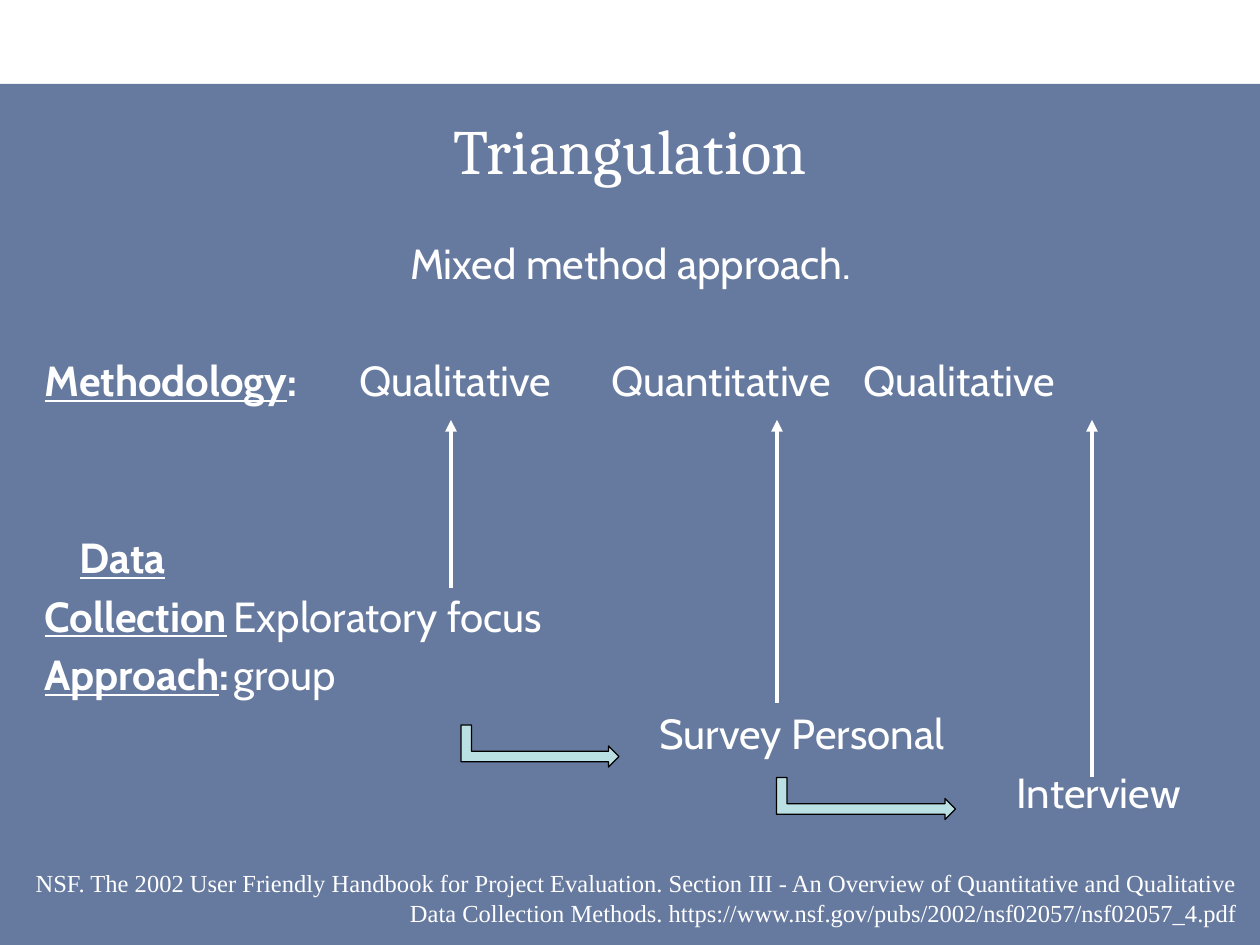
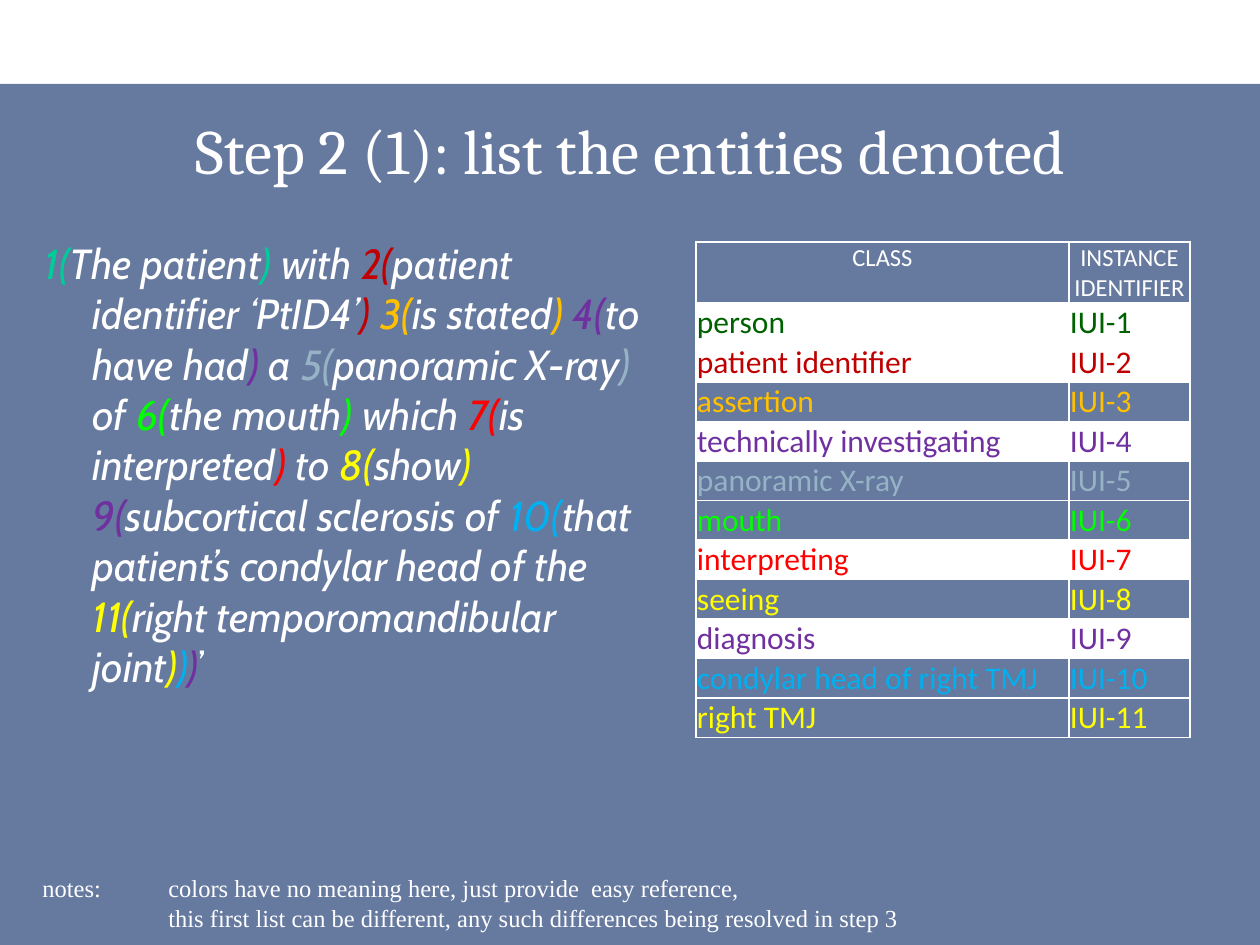
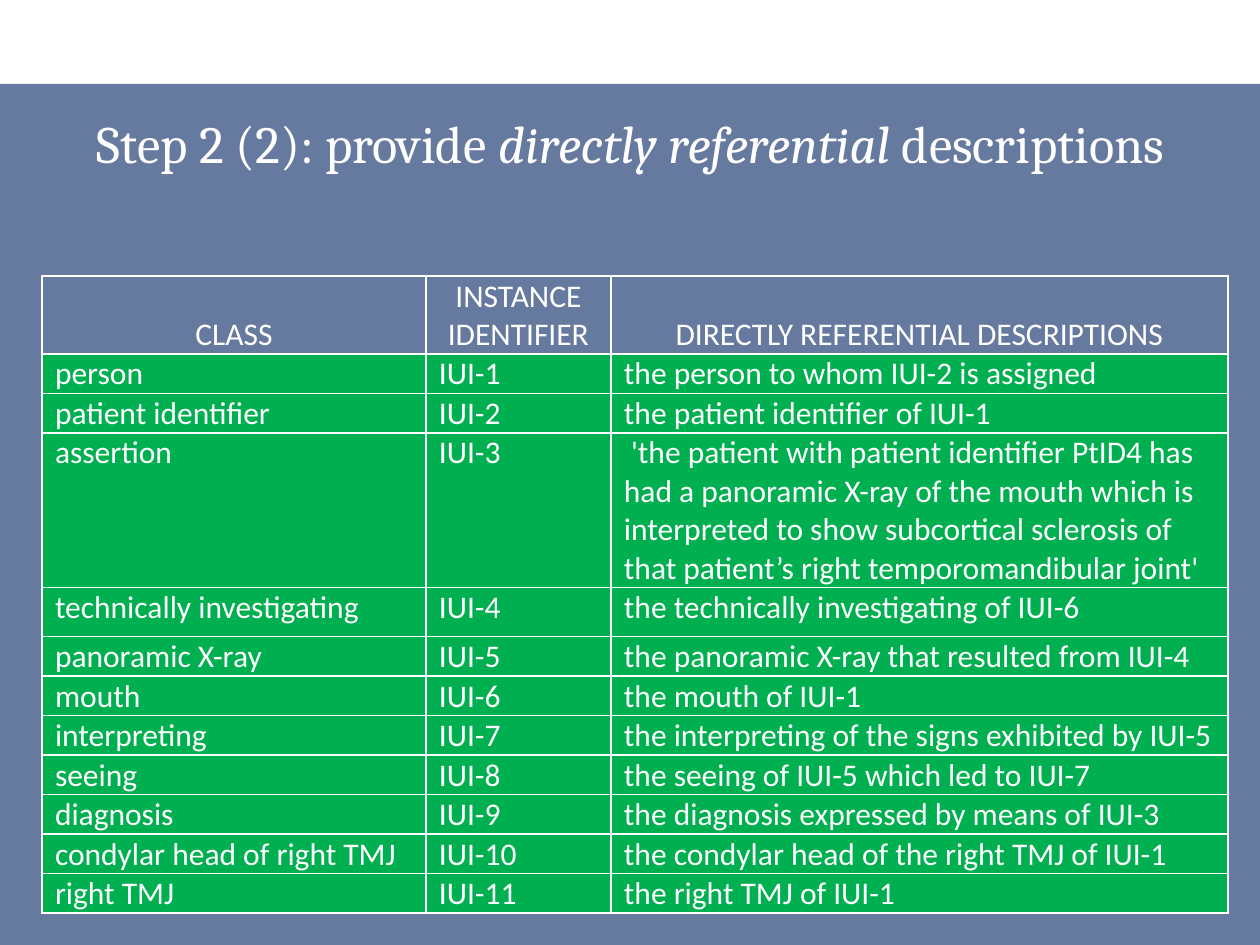
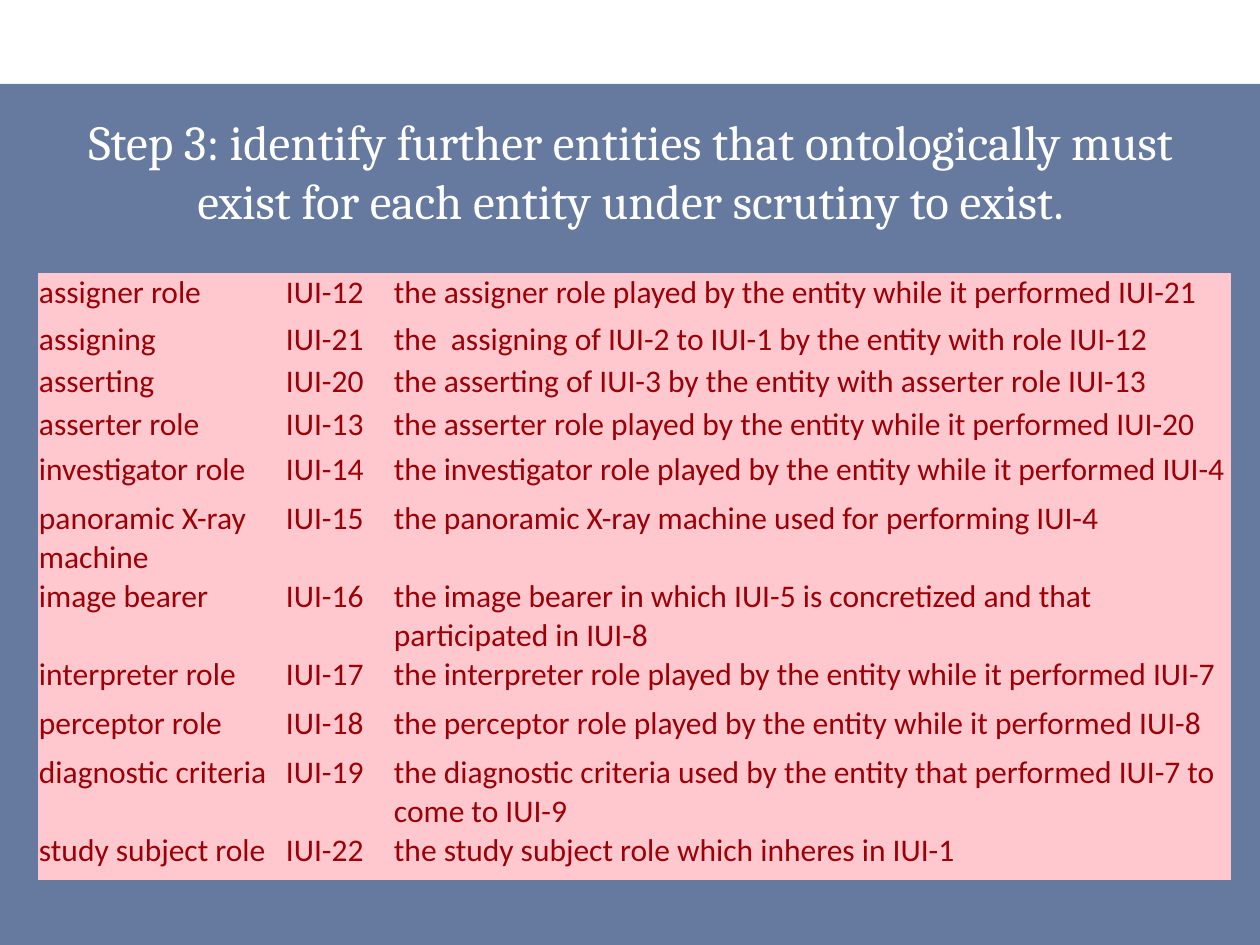
import pptx
import pptx.dml.color
import pptx.enum.dml
import pptx.enum.shapes
import pptx.enum.text
import pptx.oxml.ns
import pptx.oxml.xmlchemy
import pptx.util
from lxml import etree

qn = pptx.oxml.ns.qn
ALIGN = pptx.enum.text.PP_ALIGN
ANCHOR = pptx.enum.text.MSO_ANCHOR

PX = 914400 / 126
NO_TABLE_STYLE = "{2D5ABB26-0587-4C30-8999-92F81FD0307C}"
BODY_SIZE = 24
HANGING = 48
GAP = 4.8  # points between body paragraphs
LINE = 33.6  # points from one body line to the next

COLOURS = {
    "white": "FFFFFF", "black": "000000", "navy": "002060", "aqua": "BBE0E3",
    "teal": "00CC99", "crimson": "C00000", "gold": "FFC000", "purple": "7030A0",
    "steel": "96B3C6", "lime": "00FF00", "red": "FF0000", "yellow": "FFFF00",
    "sky": "00B0F0", "forest": "006100", "green": "00B050",
    "maroon": "9C0006", "pink": "FFC7CE",
}

# class, text colour, filled white on the first list, description
ENTITIES = [
    ("person", "forest", True, "the person to whom IUI-2 is assigned"),
    ("patient identifier", "crimson", True, "the patient identifier of IUI-1"),
    ("assertion", "gold", False,
     " 'the patient with patient identifier PtID4 has had a panoramic X-ray of the mouth "
     "which is interpreted to show subcortical sclerosis of that patient’s right "
     "temporomandibular joint'"),
    ("technically investigating", "purple", True, "the technically investigating of IUI-6"),
    ("panoramic X-ray", "steel", False, "the panoramic X-ray that resulted from IUI-4"),
    ("mouth", "lime", False, "the mouth of IUI-1"),
    ("interpreting", "red", True, "the interpreting of the signs exhibited by IUI-5"),
    ("seeing", "yellow", False, "the seeing of IUI-5 which led to IUI-7"),
    ("diagnosis", "purple", True, "the diagnosis expressed by means of IUI-3"),
    ("condylar head of right TMJ", "sky", False, "the condylar head of the right TMJ of IUI-1"),
    ("right TMJ", "yellow", False, "the right TMJ of IUI-1"),
]

# class, number, description, row height
FURTHER_ENTITIES = [
    ("assigner role", 12, "the assigner role played by the entity while it performed IUI-21", 47),
    ("assigning", 21, "the  assigning of IUI-2 to IUI-1 by the entity with role IUI-12", 42),
    ("asserting", 20, "the asserting of IUI-3 by the entity with asserter role IUI-13", 43),
    ("asserter role", 13, "the asserter role played by the entity while it performed IUI-20", 45),
    ("investigator role", 14,
     "the investigator role played by the entity while it performed IUI-4", 49),
    ("panoramic X-ray machine", 15, "the panoramic X-ray machine used for performing IUI-4", 77),
    ("image bearer", 16,
     "the image bearer in which IUI-5 is concretized and that participated in IUI-8", 77),
    ("interpreter role", 17,
     "the interpreter role played by the entity while it performed IUI-7", 49),
    ("perceptor role", 18, "the perceptor role played by the entity while it performed IUI-8", 49),
    ("diagnostic criteria", 19,
     "the diagnostic criteria used by the entity that performed IUI-7 to come to IUI-9", 77),
    ("study subject role", 22, "the study subject role which inheres in IUI-1", 49),
]


def px(length):
    return pptx.util.Emu(round(length * PX))


def rgb(name):
    return pptx.dml.color.RGBColor.from_string(COLOURS[name])


class Deck:
    def __init__(self):
        self.presentation = pptx.Presentation()
        self.presentation.slide_width = px(1260)
        self.presentation.slide_height = px(945)
        self.slide = None

    def new_slide(self, title_runs, title_size, has_body=False):
        layout = self.presentation.slide_layouts[1 if has_body else 5]
        self.slide = self.presentation.slides.add_slide(layout)
        if len(self.presentation.slides) == 1:
            self.master_band()
        frame = self.place(self.slide.shapes.title, 32, 105, 1197, 105)
        self.paragraph(frame, title_runs, "Cambria", title_size, align=ALIGN.CENTER)

    def master_band(self):
        """Draw the translucent background and move it behind the master's placeholders."""
        band = self.shape("RECTANGLE", 0, 84, 1260, 861, "navy")
        colour = band.fill._xPr.find(".//" + qn("a:srgbClr"))
        etree.SubElement(colour, qn("a:alpha"), val="60000")
        self.presentation.slide_master.shapes.element.insert(2, band.element)

    def place(self, shape, left, top, width, height):
        """Position a text shape and return its frame, set to wrap from the top."""
        shape.left, shape.top = px(left), px(top)
        shape.width, shape.height = px(width), px(height)
        frame = shape.text_frame
        frame.word_wrap = True
        frame.auto_size = pptx.enum.text.MSO_AUTO_SIZE.NONE
        frame.vertical_anchor = ANCHOR.TOP
        return frame

    def body(self, width):
        return self.place(self.slide.placeholders[1], 32, 231, width, 683)

    def text_box(self, left, top, width, height):
        box = self.slide.shapes.add_textbox(0, 0, 0, 0)
        return self.place(box, left, top, width, height)

    def paragraph(self, frame, runs, font, size, colour="white", align=None,
                  margin=None, hanging=0, tabs=(), before=None):
        """Add a paragraph; each run is (text, flags from 'biu', colour)."""
        first = not frame.paragraphs[0].runs
        paragraph = frame.paragraphs[0] if first else frame.add_paragraph()
        properties = paragraph._p.get_or_add_pPr()
        if margin is not None:
            properties.set("marL", str(px(margin)))
            properties.set("indent", str(px(-hanging)))
            etree.SubElement(properties, qn("a:buNone"))
        if tabs:
            tab_list = etree.SubElement(properties, qn("a:tabLst"))
            for position in tabs:
                etree.SubElement(tab_list, qn("a:tab"), pos=str(px(position)), algn="l")
        if align is not None:
            paragraph.alignment = align
        if before is not None:
            paragraph.space_before = pptx.util.Pt(0 if first else before)
        for text, flags, run_colour in runs:
            run = paragraph.add_run()
            run.text = text
            run.font.name, run.font.size = font, pptx.util.Pt(size)
            run.font.color.rgb = rgb(run_colour or colour)
            run.font.bold, run.font.italic = "b" in flags, "i" in flags
            run.font.underline = "u" in flags

    def body_line(self, frame, runs, skipped=0, margin=0, **options):
        """Add a body paragraph, below as many skipped lines as given."""
        self.paragraph(frame, runs, "Cabin", BODY_SIZE, margin=margin,
                       before=round(GAP + skipped * LINE, 2), **options)

    def note(self, frame, text, **options):
        self.paragraph(frame, plain(text), "Times New Roman", 14, **options)

    def shape(self, kind, left, top, width, height, fill, line=None, rotation=0):
        preset = getattr(pptx.enum.shapes.MSO_SHAPE, kind)
        shape = self.slide.shapes.add_shape(preset, px(left), px(top), px(width), px(height))
        shape.shadow.inherit = False
        shape.rotation = rotation
        shape.fill.solid()
        shape.fill.fore_color.rgb = rgb(fill)
        if line:
            shape.line.color.rgb = rgb(line)
            shape.line.width = pptx.util.Pt(0.75)
        else:
            shape.line.fill.background()
        return shape

    def arrow_up(self, x, bottom, top):
        arrow = self.slide.shapes.add_connector(
            pptx.enum.shapes.MSO_CONNECTOR.STRAIGHT, px(x), px(bottom), px(x), px(top))
        arrow.line.color.rgb = rgb("white")
        arrow.line.width = pptx.util.Pt(2.25)
        etree.SubElement(arrow.line._get_or_add_ln(), qn("a:tailEnd"), type="triangle")
        etree.SubElement(arrow.element.spPr, qn("a:effectLst"))

    def table(self, left, top, columns, heights):
        frame = self.slide.shapes.add_table(
            len(heights), len(columns), px(left), px(top), px(sum(columns)), px(sum(heights)))
        frame.element.find(".//" + qn("a:tableStyleId")).text = NO_TABLE_STYLE
        table = frame.table
        table.first_row = table.horz_banding = False
        for column, width in zip(table.columns, columns):
            column.width = px(width)
        for row, height in zip(table.rows, heights):
            row.height = px(height)
        return table

    def table_row(self, row, texts, size=18, colour="white", fill=None, side=1,
                  border=True, align=ALIGN.LEFT, anchor=ANCHOR.TOP):
        for cell, text in zip(row.cells, texts):
            cell.margin_left = cell.margin_right = px(side)
            cell.margin_top, cell.margin_bottom = px(1), 0
            cell.vertical_anchor = anchor
            if border:
                self.cell_border(cell)
            if fill:
                cell.fill.solid()
                cell.fill.fore_color.rgb = rgb(fill)
            else:
                cell.fill.background()
            self.paragraph(cell.text_frame, plain(text), "Calibri", size, colour, align)

    def cell_border(self, cell):
        for edge in ("a:lnL", "a:lnR", "a:lnT", "a:lnB"):
            line = etree.SubElement(cell._tc.get_or_add_tcPr(), qn(edge), w="12700")
            fill = etree.SubElement(line, qn("a:solidFill"))
            etree.SubElement(fill, qn("a:srgbClr"), val=COLOURS["white"])


def plain(text):
    return [(text, "", None)]


def triangulation(deck):
    deck.new_slide(plain("Triangulation"), 36, has_body=True)
    body = deck.body(1197)
    deck.body_line(body, plain("Mixed method approach."), margin=HANGING, hanging=HANGING,
                   align=ALIGN.CENTER)
    deck.body_line(body, [("Methodology", "bu", None), (":", "b", None),
                          ("\tQualitative\tQuantitative\tQualitative", "", None)],
                   skipped=1, tabs=(288, 546, 831))
    deck.body_line(body, [("Data", "bu", None)], skipped=2, margin=35)
    deck.body_line(body, [("Collection", "bu", None), ("\tExploratory focus", "", None)],
                   tabs=(305,))
    deck.body_line(body, [("Approach", "bu", None), (":", "b", None), ("\tgroup", "", None)],
                   tabs=(382,))
    deck.body_line(body, plain("Survey Personal"), margin=615)
    deck.body_line(body, plain("Interview"), margin=972)
    for x, bottom in ((451, 588), (777, 703), (1092, 777)):
        deck.arrow_up(x, bottom, 420)
    for left, top, length in ((519, 667, 158), (845, 709, 179)):
        deck.shape("BENT_UP_ARROW", left, top, 42, length, "aqua", "black", rotation=90)
    deck.note(deck.text_box(0, 862, 1250, 72),
              "NSF. The 2002 User Friendly Handbook for Project Evaluation. Section III - An "
              "Overview of Quantitative and Qualitative Data Collection Methods. "
              "https://www.nsf.gov/pubs/2002/nsf02057/nsf02057_4.pdf", align=ALIGN.RIGHT)


def entities_denoted(deck):
    deck.new_slide(plain("Step 2 (1): list the entities denoted"), 36, has_body=True)
    # each entity: opening mark, wording, closing mark, colour, then the words that follow
    marked = [
        ("1(", "The patient", ")", "teal", " with "),
        ("2(", "patient identifier ‘PtID4’", ") ", "crimson", ""),
        ("3(", "is stated", ") ", "gold", ""),
        ("4(", "to have had", ")", "purple", " a "),
        ("5(", "panoramic X-ray", ")", "steel", " of "),
        ("6(", "the mouth", ")", "lime", " which "),
        ("7(", "is interpreted", ")", "red", " to "),
        ("8(", "show", ") ", "yellow", ""),
        ("9(", "subcortical sclerosis of ", "", "purple", ""),
        ("10(", "that patient’s condylar head of the ", "", "sky", ""),
        ("11(", "right temporomandibular joint", ")", "yellow", ""),
    ]
    runs = []
    for opening, wording, closing, colour, following in marked:
        parts = ((opening, colour), (wording, None), (closing, colour), (following, None))
        runs += [(text, "i", part_colour) for text, part_colour in parts if text]
    runs += [(")", "i", "sky"), (")", "i", "purple"), ("’", "", None)]
    deck.body_line(deck.body(630), runs, margin=HANGING, hanging=HANGING)

    table = deck.table(696, 242, (373, 121), [61] + [39] * len(ENTITIES))
    deck.table_row(table.rows[0], ("CLASS", "INSTANCE IDENTIFIER"), size=14, align=ALIGN.CENTER)
    for number, (name, colour, filled, _) in enumerate(ENTITIES, 1):
        deck.table_row(table.rows[number], (name, f"IUI-{number}"), colour=colour,
                       fill="white" if filled else None)

    notes = deck.text_box(30, 867, 1183, 72)
    deck.note(notes, "notes:\tcolors have no meaning here, just provide  easy reference,",
              tabs=(126,))
    deck.note(notes, "this first list can be different, any such differences being resolved "
              "in step 3", margin=126)


def referential_descriptions(deck):
    deck.new_slide([("Step 2 (2): provide ", "", None), ("directly referential ", "i", None),
                    ("descriptions", "", None)], 30)
    heights = [77] + [39] * len(ENTITIES)
    heights[3], heights[4] = 152, 49
    table = deck.table(42, 276, (384, 185, 617), heights)
    deck.table_row(table.rows[0],
                   ("CLASS", "INSTANCE IDENTIFIER", "DIRECTLY REFERENTIAL DESCRIPTIONS"),
                   side=13, align=ALIGN.CENTER, anchor=ANCHOR.BOTTOM)
    for number, (name, _, _, description) in enumerate(ENTITIES, 1):
        deck.table_row(table.rows[number], (name, f"IUI-{number}", description),
                       fill="green", side=13)


def further_entities(deck):
    deck.new_slide(plain("Step 3: identify further entities that ontologically must exist for "
                         "each entity under scrutiny to exist."), 28)
    table = deck.table(38, 273, (247, 108, 838), [entity[3] for entity in FURTHER_ENTITIES])
    for row, (name, number, description, _) in zip(table.rows, FURTHER_ENTITIES):
        deck.table_row(row, (name, f"IUI-{number}", description), colour="maroon",
                       fill="pink", border=False)


def main():
    deck = Deck()
    triangulation(deck)
    entities_denoted(deck)
    referential_descriptions(deck)
    further_entities(deck)
    deck.presentation.save("out.pptx")


if __name__ == "__main__":
    main()
